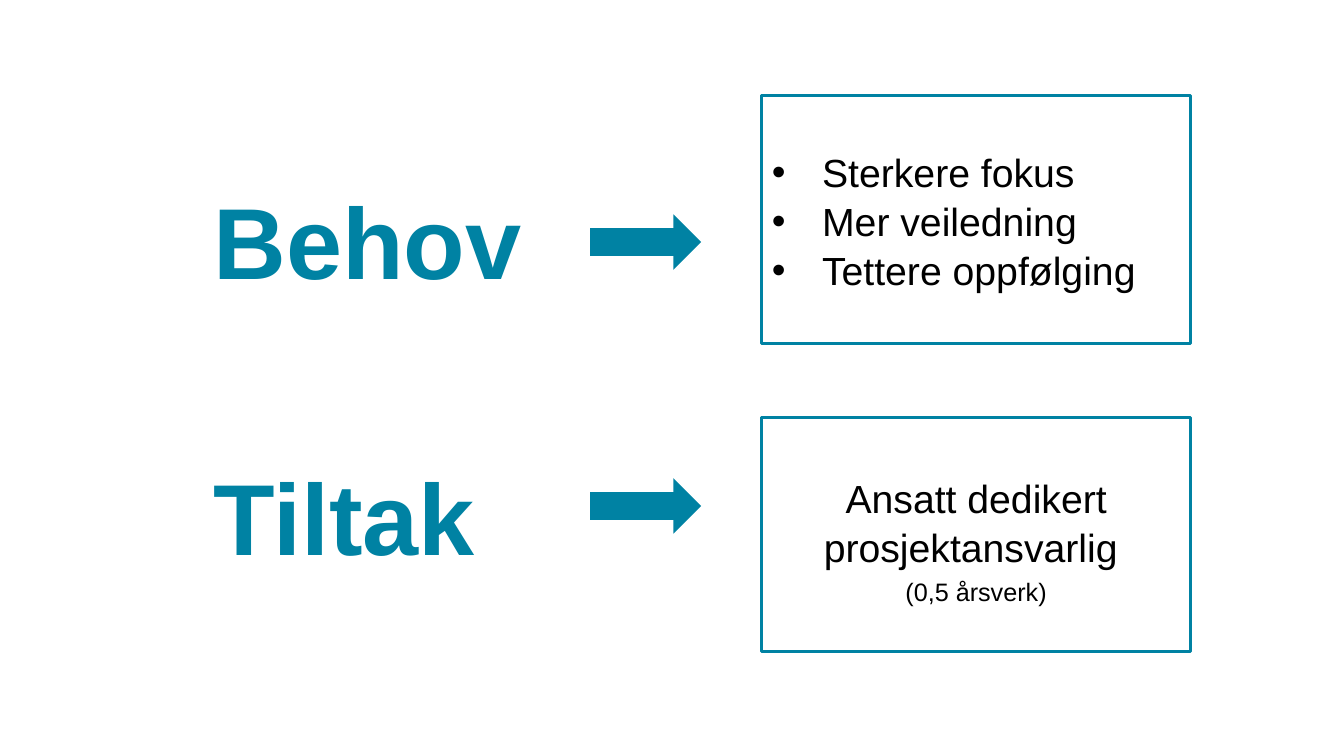
from lxml.etree import SubElement
from pptx import Presentation
from pptx.dml.color import RGBColor
from pptx.enum.shapes import MSO_SHAPE
from pptx.enum.text import MSO_ANCHOR, PP_ALIGN
from pptx.oxml.ns import qn
from pptx.util import Cm, Pt

HUES = {"teal": "0082A3", "black": "000000"}


def hue(name):
    return RGBColor.from_string(HUES[name])


def write(frame, rows, tint, bold=False, align=PP_ALIGN.LEFT, bullet=False):
    frame.word_wrap = True
    frame.vertical_anchor = MSO_ANCHOR.MIDDLE
    for i, (text, size, gap) in enumerate(rows):
        para = frame.paragraphs[0] if i == 0 else frame.add_paragraph()
        para.text = text
        para.alignment = align
        para.line_spacing = 1.05 if tint == "black" else 1.0
        para.space_before = Pt(gap)
        if bullet:
            props = para._p.get_or_add_pPr()
            props.set("marL", str(Cm(1.27)))
            props.set("indent", str(-Cm(1.27)))
            SubElement(props, qn("a:buFont"), typeface="Arial")
            SubElement(props, qn("a:buChar"), char="•")
        para.font.name = "Arial"
        para.font.size = Pt(size)
        para.font.bold = bold
        para.font.color.rgb = hue(tint)


deck = Presentation()
deck.slide_width = Cm(33.87)
deck.slide_height = Cm(19.05)
slide = deck.slides.add_slide(deck.slide_layouts[6])

words = slide.shapes.add_textbox(Cm(5.13), Cm(2.32), Cm(11.53), Cm(14.38))
write(words.text_frame, [("Behov", 72, 0), ("Tiltak", 72, 111)], "teal", bold=True)

needs = [("Sterkere fokus", 28, 0), ("Mer veiledning", 28, 0), ("Tettere oppfølging", 28, 0)]
steps = [("Ansatt dedikert prosjektansvarlig ", 28, 0), ("(0,5 årsverk)", 18, 3)]
panels = [
    (2.41, 6.25, 5.4, needs, PP_ALIGN.LEFT, True, 0.13),
    (10.52, 5.89, 12.05, steps, PP_ALIGN.CENTER, False, 0.38),
]

for top, height, level, rows, align, bullet, inset in panels:
    arrow = slide.shapes.add_shape(
        MSO_SHAPE.RIGHT_ARROW, Cm(14.87), Cm(level), Cm(2.8), Cm(1.4))
    arrow.shadow.inherit = False
    arrow.fill.solid()
    arrow.fill.fore_color.rgb = hue("teal")
    arrow.line.fill.background()

    box = slide.shapes.add_shape(
        MSO_SHAPE.RECTANGLE, Cm(19.2), Cm(top), Cm(10.8), Cm(height))
    box.shadow.inherit = False
    box.fill.background()
    box.line.color.rgb = hue("teal")
    box.line.width = Pt(2)
    box.text_frame.margin_top = Cm(inset)
    write(box.text_frame, rows, "black", align=align, bullet=bullet)

deck.save("out.pptx")
